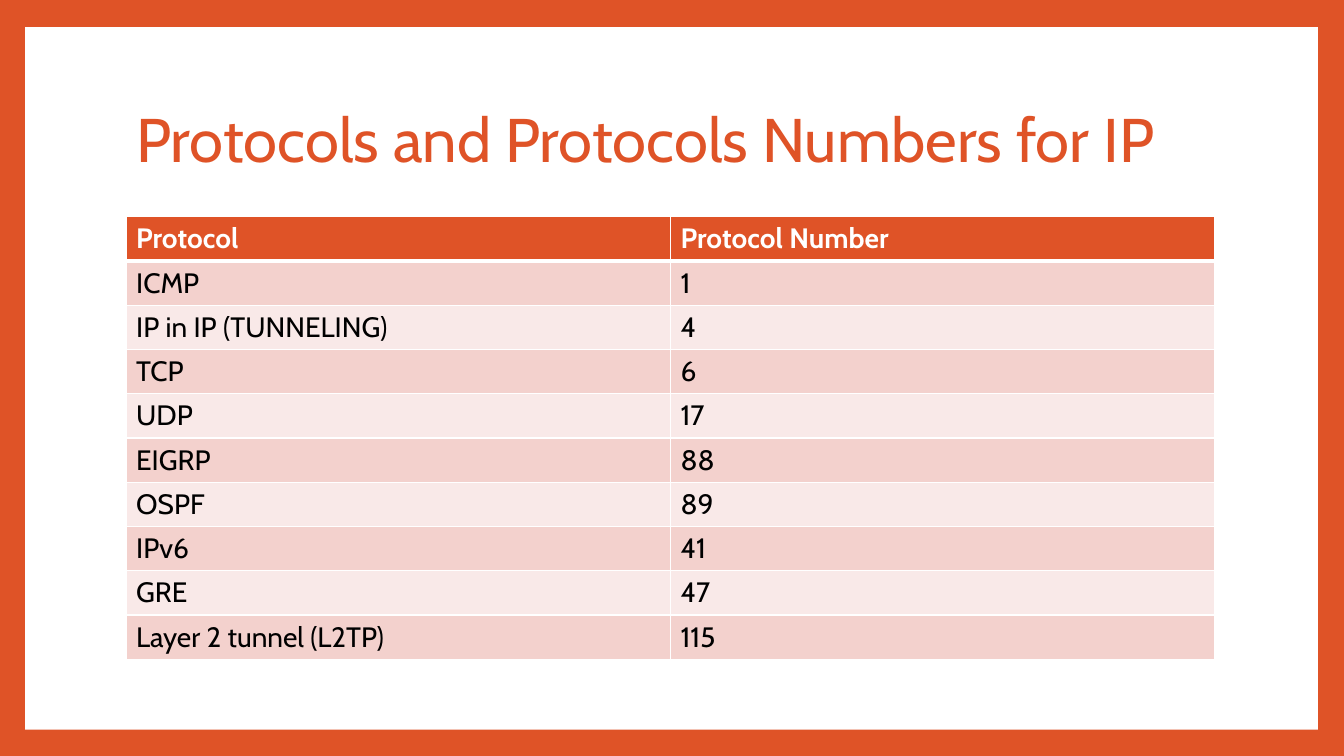
from pptx import Presentation
from pptx.dml.color import RGBColor as Rgb
from pptx.enum.shapes import MSO_SHAPE as Shape
from pptx.enum.text import MSO_ANCHOR as Anchor, MSO_AUTO_SIZE as Fit, PP_ALIGN as Align
from pptx.oxml.ns import qn
from pptx.util import Pt
from lxml.etree import SubElement as Sub

PX = 9144
FONT = "Cabin"
ORANGE, WHITE, BLACK = "DF5327", "FFFFFF", "000000"
BANDS = ["F3D1CD", "F9E9E8"]
ROWS = [
    ("Protocol", "Protocol Number"),
    ("ICMP", "1"),
    ("IP in IP (TUNNELING)", "4"),
    ("TCP", "6"),
    ("UDP", "17"),
    ("EIGRP", "88"),
    ("OSPF", "89"),
    ("IPv6", "41"),
    ("GRE", "47"),
    ("Layer 2 tunnel (L2TP)", "115"),
]


def px(*sizes):
    return [size * PX for size in sizes]


def paint(fill, color):
    fill.solid()
    fill.fore_color.rgb = Rgb.from_string(color)


def style(font, size, color, bold=False):
    font.name = FONT
    font.size = Pt(size)
    font.bold = bold
    font.color.rgb = Rgb.from_string(color)


def add_panel(slide, *box):
    panel = slide.shapes.add_shape(Shape.RECTANGLE, *px(*box))
    panel.shadow.inherit = False
    paint(panel.fill, WHITE)
    panel.line.fill.background()
    slide.shapes._spTree.insert(2, panel._element)


def set_title(slide, text, *box):
    title = slide.shapes.title
    title.left, title.top, title.width, title.height = px(*box)
    frame = title.text_frame
    frame.text = text
    frame.word_wrap = True
    frame.auto_size = Fit.NONE
    frame.vertical_anchor = Anchor.MIDDLE
    line = frame.paragraphs[0]
    line.alignment = Align.LEFT
    line.line_spacing = 0.9
    style(line.font, 44, ORANGE)


def add_edges(cell, row):
    props = cell._tc.get_or_add_tcPr()
    for side in "LRTB":
        thick = (row, side) in [(0, "B"), (1, "T")]
        edge = Sub(props, qn(f"a:ln{side}"), w=str(Pt(3 if thick else 1)))
        Sub(Sub(edge, qn("a:solidFill")), qn("a:srgbClr"), val=WHITE)


def fill_cell(cell, text, row):
    head = row == 0
    add_edges(cell, row)
    paint(cell.fill, ORANGE if head else BANDS[(row - 1) % 2])
    cell.text = text
    font = cell.text_frame.paragraphs[0].font
    style(font, 20, WHITE if head else BLACK, head)


def add_grid(slide, rows, *box):
    table = slide.shapes.add_table(len(rows), len(rows[0]), *px(*box)).table
    for r, texts in enumerate(rows):
        for c, text in enumerate(texts):
            fill_cell(table.cell(r, c), text, r)


def main():
    deck = Presentation()
    deck.slide_width, deck.slide_height = px(1333, 750)
    slide = deck.slides.add_slide(deck.slide_layouts[5])
    paint(slide.background.fill, ORANGE)
    add_panel(slide, 25, 27, 1282, 697)
    set_title(slide, "Protocols and Protocols Numbers for IP", 125, 67, 1080, 148)
    add_grid(slide, ROWS, 125, 215, 1080, 433)
    deck.save("out.pptx")


if __name__ == "__main__":
    main()
